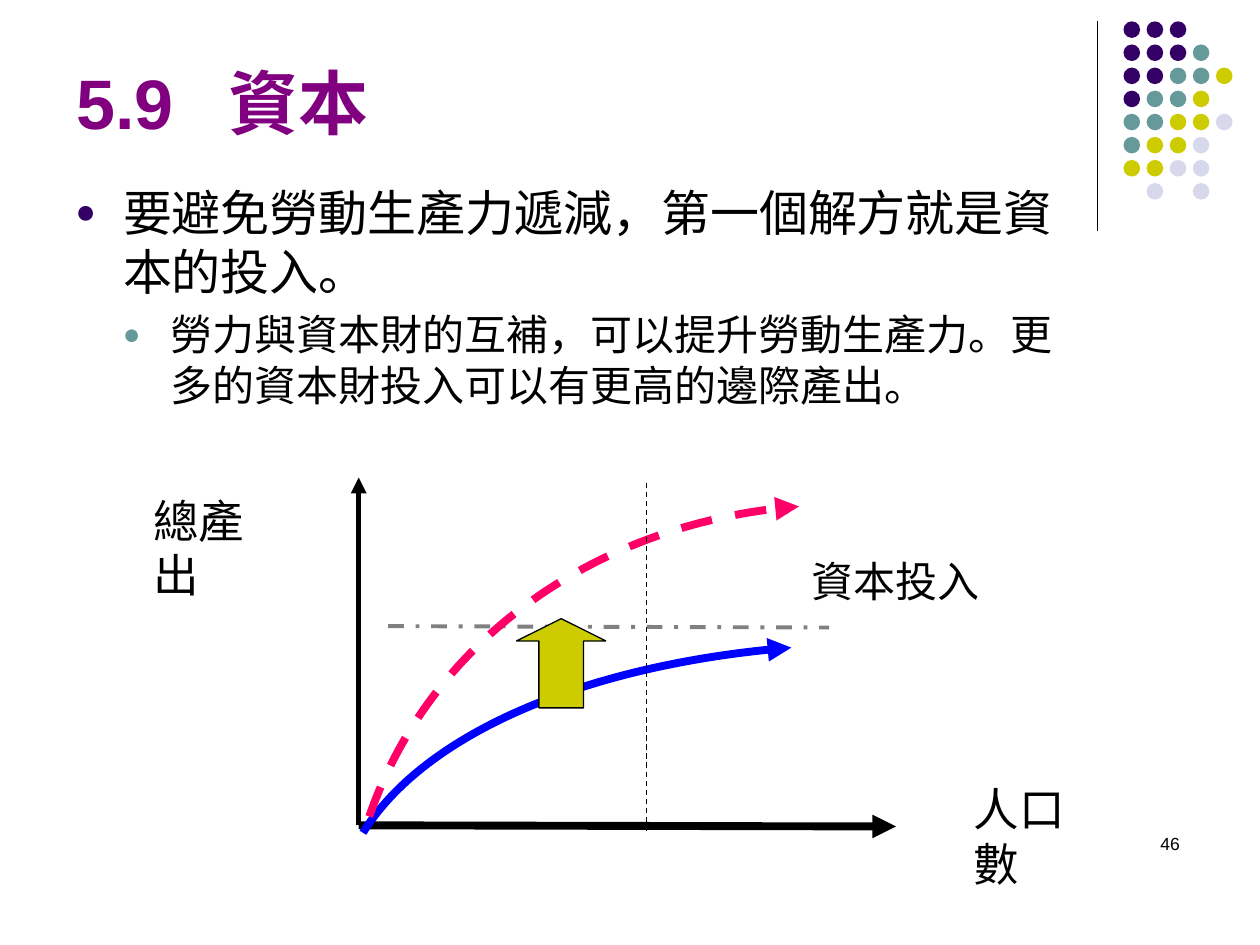
from dataclasses import dataclass
from lxml import etree
from pptx import Presentation
from pptx.dml.color import RGBColor
from pptx.enum import dml, shapes, text
from pptx.oxml.ns import qn
from pptx.util import Pt


@dataclass(frozen=True)
class Theme:
    font: str = "Arial"
    ink: str = "000000"
    title: str = "800080"
    violet: str = "330066"
    teal: str = "669999"
    olive: str = "CCCC00"
    mist: str = "D8D8EC"
    blue: str = "0000FF"
    pink: str = "FF0066"
    grey: str = "808080"
    title_size: int = 40
    body_size: int = 28
    axis_size: int = 26
    detail_size: int = 24
    number_size: int = 10


THEME = Theme()
DASH = dml.MSO_LINE.DASH
DASH_DOT = dml.MSO_LINE.DASH_DOT


def points(*values):
    return [Pt(value) for value in values]


def add_child(parent, tag, **attributes):
    return etree.SubElement(parent, qn(tag), attributes)


def style_line(shape, color, width, dash=None, arrow=False):
    shape.line.color.rgb = RGBColor.from_string(color)
    shape.line.width = Pt(width)
    if dash:
        shape.line.dash_style = dash
    if arrow:
        add_child(shape.element.spPr.find(qn("a:ln")), "a:tailEnd", type="triangle")


def add_line(page, start, end, color, width, dash=None, arrow=False):
    line = page.shapes.add_connector(shapes.MSO_CONNECTOR.STRAIGHT, *points(*start, *end))
    style_line(line, color, width, dash, arrow)
    add_child(line.element.spPr, "a:effectLst")


def add_curve(page, controls, color, dash=None):
    start, *others = [points(*control) for control in controls]
    builder = page.shapes.build_freeform(*start, scale=1.0)
    builder.add_line_segments(others, close=False)
    curve = builder.convert_to_shape()
    curve.shadow.inherit = False
    curve.fill.background()
    style_line(curve, color, 4.5, dash, True)
    segments = list(curve.element.spPr.iter(qn("a:lnTo")))
    outline = segments[0].getparent()
    bezier = add_child(outline, "a:cubicBezTo")
    for segment in segments:
        bezier.append(segment[0])
        outline.remove(segment)


def add_solid(page, kind, box, color):
    shape = page.shapes.add_shape(kind, *points(*box))
    shape.shadow.inherit = False
    shape.fill.solid()
    shape.fill.fore_color.rgb = RGBColor.from_string(color)
    shape.line.fill.background()
    return shape


def add_frame(page, box, wrap=True):
    frame = page.shapes.add_textbox(*points(*box)).text_frame
    frame.word_wrap = wrap
    return frame


def add_text(para, words, size, color=THEME.ink, bold=False):
    span = para.add_run()
    span.text = words
    span.font.name = THEME.font
    span.font.size = Pt(size)
    span.font.bold = bold
    span.font.color.rgb = RGBColor.from_string(color)


def add_label(page, box, words, size, wrap=False):
    add_text(add_frame(page, box, wrap).paragraphs[0], words, size)


def draw_dots(page, box):
    left, top, width, height = box
    add_line(page, (left, top), (left, top + height), THEME.ink, 0.75)
    colors = {"V": THEME.violet, "T": THEME.teal, "O": THEME.olive, "M": THEME.mist}
    rows = ("VVV", "VVVT", "VVTTO", "VTTO", "TTOOM", "TOOM", "OOMM", " M M")
    pitch, diameter = 13.2, 9.5
    for row, marks in enumerate(rows):
        for column, mark in enumerate(marks):
            if mark in colors:
                place = (left + 15 + column * pitch, top + row * pitch, diameter, diameter)
                add_solid(page, shapes.MSO_SHAPE.OVAL, place, colors[mark])


def draw_title(page, box):
    frame = add_frame(page, box)
    frame.vertical_anchor = text.MSO_ANCHOR.BOTTOM
    para = frame.paragraphs[0]
    tabs = add_child(para._p.get_or_add_pPr(), "a:tabLst")
    add_child(tabs, "a:tab", pos=str(Pt(87)), algn="l")
    add_text(para, "5.9\t資本", THEME.title_size, THEME.title, True)


def draw_body(page, box):
    items = (
        ("要避免勞動生產力遞減，第一個解方就是資本的投入。", THEME.body_size, THEME.violet),
        ("勞力與資本財的互補，可以提升勞動生產力。更多的資本財投入可以有更高的邊際產出。",
         THEME.detail_size, THEME.teal),
    )
    frame = add_frame(page, box)
    indent = 27.2
    for level, (words, size, color) in enumerate(items):
        para = frame.add_paragraph() if level else frame.paragraphs[0]
        para.level = level
        para.space_before = Pt(size * 0.2)
        properties = para._p.get_or_add_pPr()
        properties.set("marL", str(Pt(indent * (level + 1))))
        properties.set("indent", str(Pt(-indent)))
        add_child(add_child(properties, "a:buClr"), "a:srgbClr", val=color)
        add_child(properties, "a:buSzPct", val="70000")
        add_child(properties, "a:buFont", typeface=THEME.font)
        add_child(properties, "a:buChar", char="●")
        add_text(para, words, size)


def draw_graph(page, box):
    left, top, width, height = box

    def at(x, y):
        return left + x, top + y

    origin = at(125, 201.6)
    add_line(page, origin, at(432, 202.3), THEME.ink, 4.5, arrow=True)
    add_line(page, origin, at(125, 2.9), THEME.ink, 3, arrow=True)
    add_curve(page, (at(127.4, 205.9), at(161.9, 150.5), at(256.2, 109.4), at(372.2, 100.1)),
              THEME.blue)
    add_line(page, at(141.8, 87.8), at(393.8, 88.6), THEME.grey, 2.25, DASH_DOT)
    add_curve(page, (at(131, 196.6), at(164.8, 98.6), at(262, 28.1), at(376.5, 19.4)),
              THEME.pink, DASH)
    arrow = add_solid(page, shapes.MSO_SHAPE.UP_ARROW, (*at(215.2, 83.5), 51, 51), THEME.olive)
    arrow.adjustments[0], arrow.adjustments[1] = 0.5, 0.25
    style_line(arrow, THEME.ink, 0.75)
    label_width, label_height = 92, 38
    add_label(page, (left + width - label_width, top + 172.8, label_width, label_height),
              "人口數", THEME.axis_size)
    add_label(page, (*at(0.6, 7.9), label_width, label_height), "總產出", THEME.axis_size)
    add_label(page, (*at(376.5, 43.9), 182, 36), "資本投入", THEME.detail_size, True)
    add_line(page, at(289.4, 5.8), at(289.4, height), THEME.ink, 0.75, DASH)


def draw_number(page, box):
    para = add_frame(page, box).paragraphs[0]
    para.alignment = text.PP_ALIGN.RIGHT
    add_text(para, "46", THEME.number_size)


def main():
    deck = Presentation()
    deck.slide_width, deck.slide_height = points(720, 540)
    page = deck.slides.add_slide(deck.slide_layouts[6])
    draw_dots(page, (627, 12.2, 80, 119.6))
    draw_number(page, (513.4, 472.3, 167.8, 36))
    draw_title(page, (36.7, 14.4, 586, 71.3))
    draw_body(page, (36, 100.8, 584.6, 164.2))
    draw_graph(page, (80, 270, 561.4, 206))
    deck.save("out.pptx")


if __name__ == "__main__":
    main()
